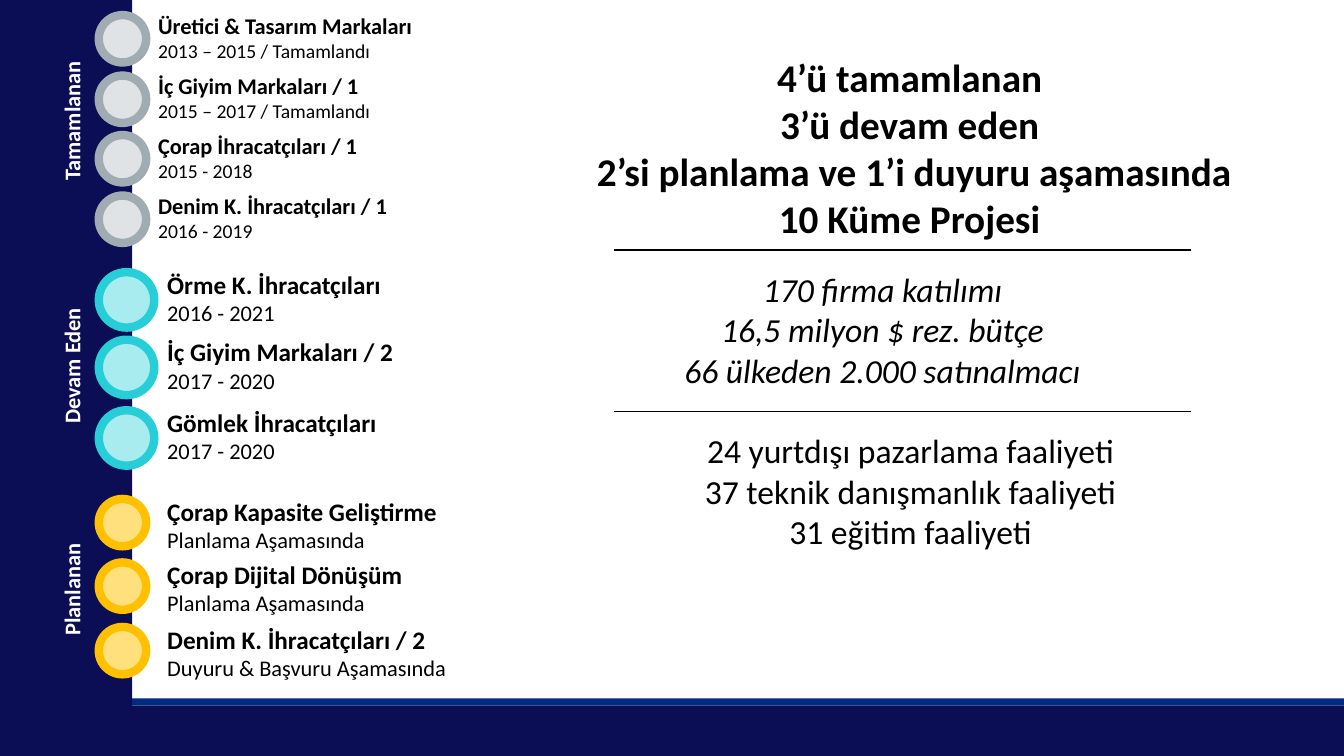
from collections import namedtuple
from lxml import etree
from pptx import Presentation
from pptx.dml.color import RGBColor
from pptx.enum.shapes import MSO_CONNECTOR, MSO_SHAPE
from pptx.enum.text import MSO_ANCHOR, PP_ALIGN
from pptx.oxml.ns import qn
from pptx.util import Inches, Pt

RECT, ROUND, OVAL = MSO_SHAPE.RECTANGLE, MSO_SHAPE.ROUNDED_RECTANGLE, MSO_SHAPE.OVAL
STRAIGHT = MSO_CONNECTOR.STRAIGHT
LEFT, CENTER = PP_ALIGN.LEFT, PP_ALIGN.CENTER
TOP, MIDDLE = MSO_ANCHOR.TOP, MSO_ANCHOR.MIDDLE


class Theme:
    font = "Calibri"
    navy, blue, white, black = "0B0D55", "002B82", "FFFFFF", "000000"
    grey, grey_ring = "DFE3E5", "A1ACB2"
    aqua, aqua_ring = "A8ECEF", "27CED7"
    gold, gold_ring = "FFE07D", "FFC000"
    headline, figures, label = 28, 24, 16
    ring, rule = 6, 1


Phase = namedtuple("Phase", "label label_mid label_w text_x text_w dot fill ring "
                            "title_size date_size projects")

PHASES = [
    Phase("Tamamlanan", 1.2, 2.41, 1.47, 3.26, 0.47, Theme.grey, Theme.grey_ring, 16, 14, [
        (0.07, "Üretici & Tasarım Markaları", "2013 – 2015 / Tamamlandı"),
        (0.67, "İç Giyim Markaları / 1", "2015 – 2017 / Tamamlandı"),
        (1.26, "Çorap İhracatçıları / 1", "2015 - 2018"),
        (1.86, "Denim K. İhracatçıları / 1", "2016 - 2019")]),
    Phase("Devam Eden", 3.63, 2.04, 1.56, 3.26, 0.55, Theme.aqua, Theme.aqua_ring, 18, 16, [
        (2.62, "Örme K. İhracatçıları", "2016 - 2021"),
        (3.29, "İç Giyim Markaları / 2", "2017 - 2020"),
        (3.99, "Gömlek İhracatçıları", "2017 - 2020")]),
    Phase("Planlanan", 5.85, 1.93, 1.56, 3.92, 0.47, Theme.gold, Theme.gold_ring, 18, 16, [
        (4.87, "Çorap Kapasite Geliştirme", "Planlama Aşamasında"),
        (5.5, "Çorap Dijital Dönüşüm", "Planlama Aşamasında"),
        (6.14, "Denim K. İhracatçıları / 2", "Duyuru & Başvuru Aşamasında")]),
]

HEADLINE = ["4’ü tamamlanan ", "3’ü devam eden ",
            "2’si planlama ve 1’i duyuru aşamasında", "10 Küme Projesi "]
REACH = ["170 firma katılımı ", "16,5 milyon $ rez. bütçe ",
         "66 ülkeden 2.000 satınalmacı "]
ACTIVITIES = ["24 yurtdışı pazarlama faaliyeti", "37 teknik danışmanlık faaliyeti",
              "31 eğitim faaliyeti"]


def rgb(color):
    return RGBColor.from_string(color)


def add_shape(s, kind, x, y, w, h, fill=None, line=None):
    sp = s.shapes.add_shape(kind, Inches(x), Inches(y), Inches(w), Inches(h))
    sp.shadow.inherit = False
    if fill:
        sp.fill.solid()
        sp.fill.fore_color.rgb = rgb(fill)
    else:
        sp.fill.background()
    if line:
        sp.line.color.rgb = rgb(line)
        sp.line.width = Pt(Theme.ring)
    else:
        sp.line.fill.background()
    return sp


def write_line(p, text, size, color=Theme.black, bold=False, italic=False, align=LEFT):
    p.alignment = align
    r = p.add_run()
    r.text = text
    f = r.font
    f.name, f.size, f.bold, f.italic = Theme.font, Pt(size), bold, italic
    f.color.rgb = rgb(color)


def write_lines(sp, lines, anchor=TOP):
    """Fill a shape from (text, format) pairs, one paragraph each."""
    tf = sp.text_frame
    tf.word_wrap = True
    tf.vertical_anchor = anchor
    for i, (text, style) in enumerate(lines):
        p = tf.add_paragraph() if i else tf.paragraphs[0]
        write_line(p, text, **style)


def add_text(s, x, y, w, h, lines):
    sp = s.shapes.add_textbox(Inches(x), Inches(y), Inches(w), Inches(h))
    write_lines(sp, lines)
    return sp


def add_rule(s, x, y, w):
    line = s.shapes.add_connector(STRAIGHT, Inches(x), Inches(y), Inches(x + w), Inches(y))
    line.line.color.rgb = rgb(Theme.black)
    line.line.width = Pt(Theme.rule)
    etree.SubElement(line._element.spPr, qn("a:effectLst"))


def add_frame(s, w, h):
    """Navy footer and side band with a blue stripe above the footer."""
    add_shape(s, RECT, 0, h - 0.5, w, 0.5, Theme.navy)
    add_shape(s, RECT, 0, h - 0.57, w, 0.07, Theme.blue)
    add_shape(s, RECT, 0, 0, 1.31, h, Theme.navy)


def add_phase(s, phase, dot_x, label_x):
    text_h = 0.61 if phase.title_size == 16 else 0.67
    for y, title, date in phase.projects:
        add_shape(s, OVAL, dot_x, y + 0.08, phase.dot, phase.dot, phase.fill, phase.ring)
        add_text(s, phase.text_x, y, phase.text_w, text_h, [
            (title, dict(size=phase.title_size, bold=True)),
            (date, dict(size=phase.date_size))])
    w, h = phase.label_w, 0.37
    style = dict(size=Theme.label, color=Theme.white, bold=True, align=CENTER)
    label = add_text(s, label_x - w / 2, phase.label_mid - h / 2, w, h, [(phase.label, style)])
    label.rotation = 270


def add_summary(s, x, y, w):
    headline = add_shape(s, ROUND, x + 0.07, y, w - 0.07, 2.2)
    style = dict(size=Theme.headline, bold=True, align=CENTER)
    write_lines(headline, [(t, style) for t in HEADLINE], MIDDLE)
    style = dict(size=Theme.figures, align=CENTER)
    add_text(s, x + 1.03, y + 2.26, 5.38, 1.31, [(t, dict(style, italic=True)) for t in REACH])
    add_text(s, x, y + 3.86, w, 1.31, [(t, style) for t in ACTIVITIES])
    for rule_y in (2.12, 3.72):
        add_rule(s, x + 1.02, y + rule_y, 5.72)


def main():
    prs = Presentation()
    w, h = 13.33, 7.5
    prs.slide_width, prs.slide_height = Inches(w), Inches(h)
    s = prs.slides.add_slide(prs.slide_layouts[6])
    add_frame(s, w, h)
    for phase in PHASES:
        add_phase(s, phase, dot_x=0.98, label_x=0.71)
    add_summary(s, 5.07, 0.36, 7.92)
    prs.save("out.pptx")


if __name__ == "__main__":
    main()
